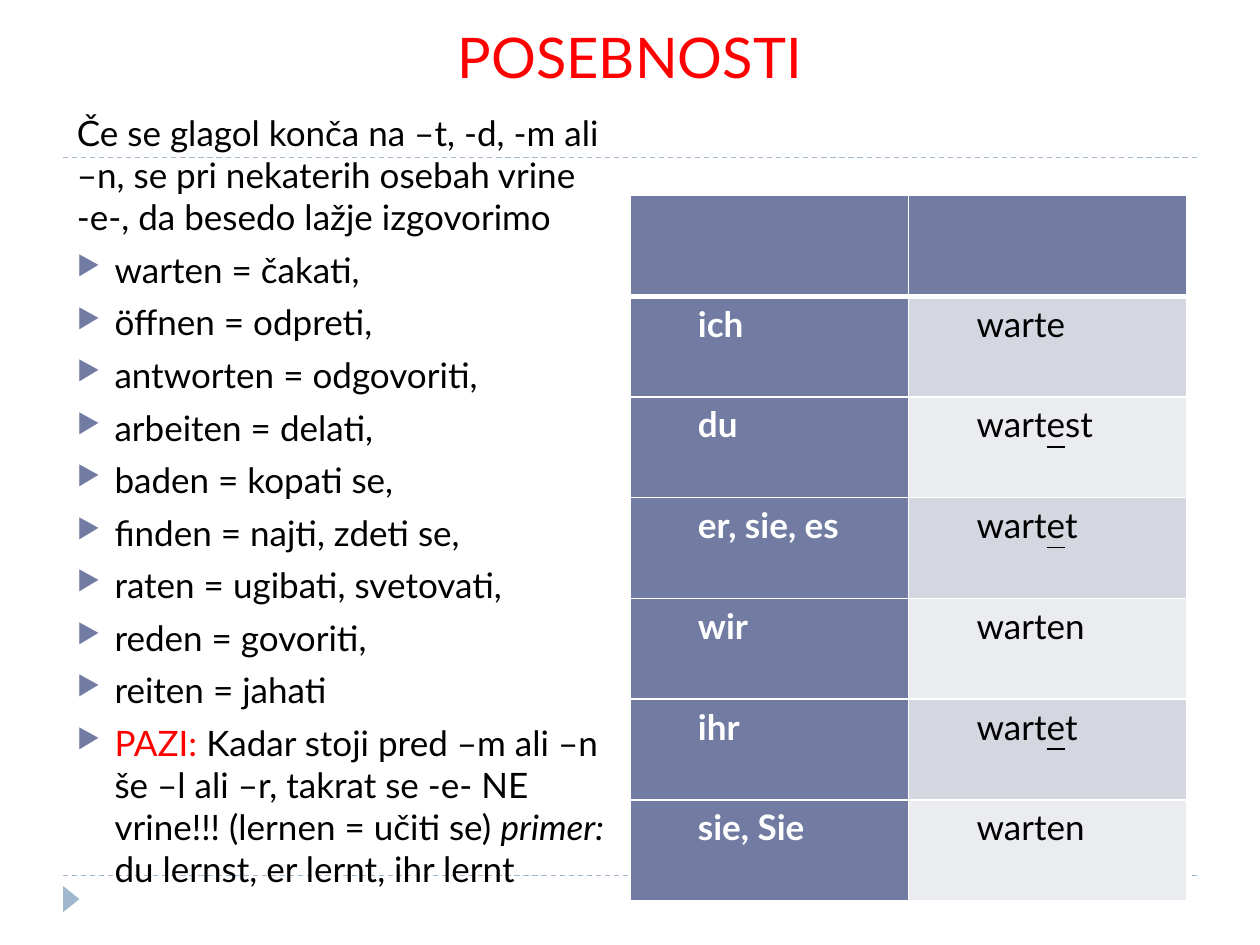
import pptx
import pptx.dml.color
import pptx.enum.shapes
import pptx.enum.dml
import pptx.enum.text
import pptx.oxml
import pptx.oxml.ns
import pptx.util
from pptx.util import Cm

NAMESPACE = pptx.oxml.ns.nsdecls("a")


def color(value):
    return pptx.dml.color.RGBColor.from_string(value)


def write(paragraph, pieces, size, bold=False):
    paragraph.text = pieces[0][0]
    for text, *_ in pieces[1:]:
        paragraph.add_run().text = text
    for run, (_, shade, style) in zip(paragraph.runs, pieces):
        run.font.name = "Lato"
        run.font.size = pptx.util.Pt(size)
        run.font.color.rgb = color(shade)
        run.font.bold = bold
        run.font.italic = style == "italic"
        run.font.underline = style == "underline"


presentation = pptx.Presentation()
presentation.slide_width = Cm(25.4)
presentation.slide_height = Cm(19.05)
slide = presentation.slides.add_slide(presentation.slide_layouts[6])

for y in (17.65, 3.17):
    rule = slide.shapes.add_connector(
        pptx.enum.shapes.MSO_CONNECTOR.STRAIGHT, Cm(1.27), Cm(y), Cm(24.13), Cm(y))
    rule.line.color.rgb = color("9FB8CD")
    rule.line.width = pptx.util.Pt(0.75)
    rule.line.dash_style = pptx.enum.dml.MSO_LINE.DASH
    rule._element.spPr.append(pptx.oxml.parse_xml(f"<a:effectLst {NAMESPACE}/>"))

marker = slide.shapes.add_shape(
    pptx.enum.shapes.MSO_SHAPE.ISOSCELES_TRIANGLE, Cm(1.17), Cm(17.96), Cm(0.53), Cm(0.33))
marker.rotation = 90
marker.shadow.inherit = False
marker.fill.solid()
marker.fill.fore_color.rgb = color("9FB8CD")
marker.line.fill.background()

title = slide.shapes.add_textbox(Cm(1.27), Cm(0), Cm(22.86), Cm(1.93))
title.text_frame.word_wrap = True
title.text_frame.vertical_anchor = pptx.enum.text.MSO_ANCHOR.BOTTOM
write(title.text_frame.paragraphs[0], [("POSEBNOSTI", "FF0000", "")], 32)
title.text_frame.paragraphs[0].alignment = pptx.enum.text.PP_ALIGN.CENTER

intro = "Če se glagol konča na –t, -d, -m ali –n, se pri nekaterih osebah vrine -e-, da besedo lažje izgovorimo"
verbs = [
    "warten = čakati,",
    "öffnen = odpreti,",
    "antworten = odgovoriti,",
    "arbeiten = delati,",
    "baden = kopati se,",
    "finden = najti, zdeti se,",
    "raten = ugibati, svetovati,",
    "reden = govoriti,",
    "reiten = jahati",
]
warning = [
    ("PAZI: ", "FF0000", ""),
    ("Kadar stoji pred –m ali –n še –l ali –r, takrat se -e- NE vrine!!! (lernen = učiti se) ", "000000", ""),
    ("primer: ", "000000", "italic"),
    ("du lernst, er lernt, ihr lernt", "000000", ""),
]
body = slide.shapes.add_textbox(Cm(1.3), Cm(2.13), Cm(11.23), Cm(16.41))
body.text_frame.word_wrap = True
lines = [[(text, "000000", "")] for text in [intro, *verbs]] + [warning]
for index, pieces in enumerate(lines):
    paragraph = body.text_frame.add_paragraph() if index else body.text_frame.paragraphs[0]
    write(paragraph, pieces, 20)
    paragraph.space_before = pptx.util.Pt(6)
    if index:
        properties = paragraph._p.get_or_add_pPr()
        properties.set("marL", str(Cm(0.76)))
        properties.set("indent", str(-Cm(0.76)))
        for bullet in (
            f'<a:buClr {NAMESPACE}><a:srgbClr val="727CA3"/></a:buClr>',
            f'<a:buSzPct {NAMESPACE} val="76000"/>',
            f'<a:buChar {NAMESPACE} char="▶"/>',
        ):
            properties.append(pptx.oxml.parse_xml(bullet))

conjugation = [
    ("", [""]),
    ("ich", ["warte"]),
    ("du", ["wart", "e", "st"]),
    ("er, sie, es", ["wart", "e", "t"]),
    ("wir", ["warten"]),
    ("ihr", ["wart", "e", "t"]),
    ("sie, Sie", ["warten"]),
]
table = slide.shapes.add_table(
    len(conjugation), 2, Cm(12.7), Cm(3.94), Cm(11.23), Cm(14.22)).table
for row, (pronoun, parts) in enumerate(conjugation):
    verb = [(part, "000000", "underline" if part == "e" else "") for part in parts]
    for column, pieces in enumerate(([(pronoun, "FFFFFF", "")], verb)):
        cell = table.cell(row, column)
        properties = cell._tc.get_or_add_tcPr()
        for side in "LRTB":
            thick = (row, side) in ((0, "B"), (1, "T"))
            width = pptx.util.Pt(3 if thick else 1)
            properties.append(pptx.oxml.parse_xml(
                f'<a:ln{side} {NAMESPACE} w="{width}"><a:solidFill>'
                f'<a:srgbClr val="FFFFFF"/></a:solidFill></a:ln{side}>'))
        cell.fill.solid()
        band = "D5D7E0" if row % 2 else "EBECF0"
        cell.fill.fore_color.rgb = color("727CA3" if row == 0 or column == 0 else band)
        if row:
            cell.margin_left = cell.margin_right = Cm(0.1)
            cell.margin_top = cell.margin_bottom = Cm(0)
            paragraph = cell.text_frame.paragraphs[0]
            write(paragraph, pieces, 20, bold=column == 0)
            paragraph.line_spacing = 1.15
            paragraph._p.get_or_add_pPr().set("marL", str(Cm(1.27)))

presentation.save("out.pptx")
